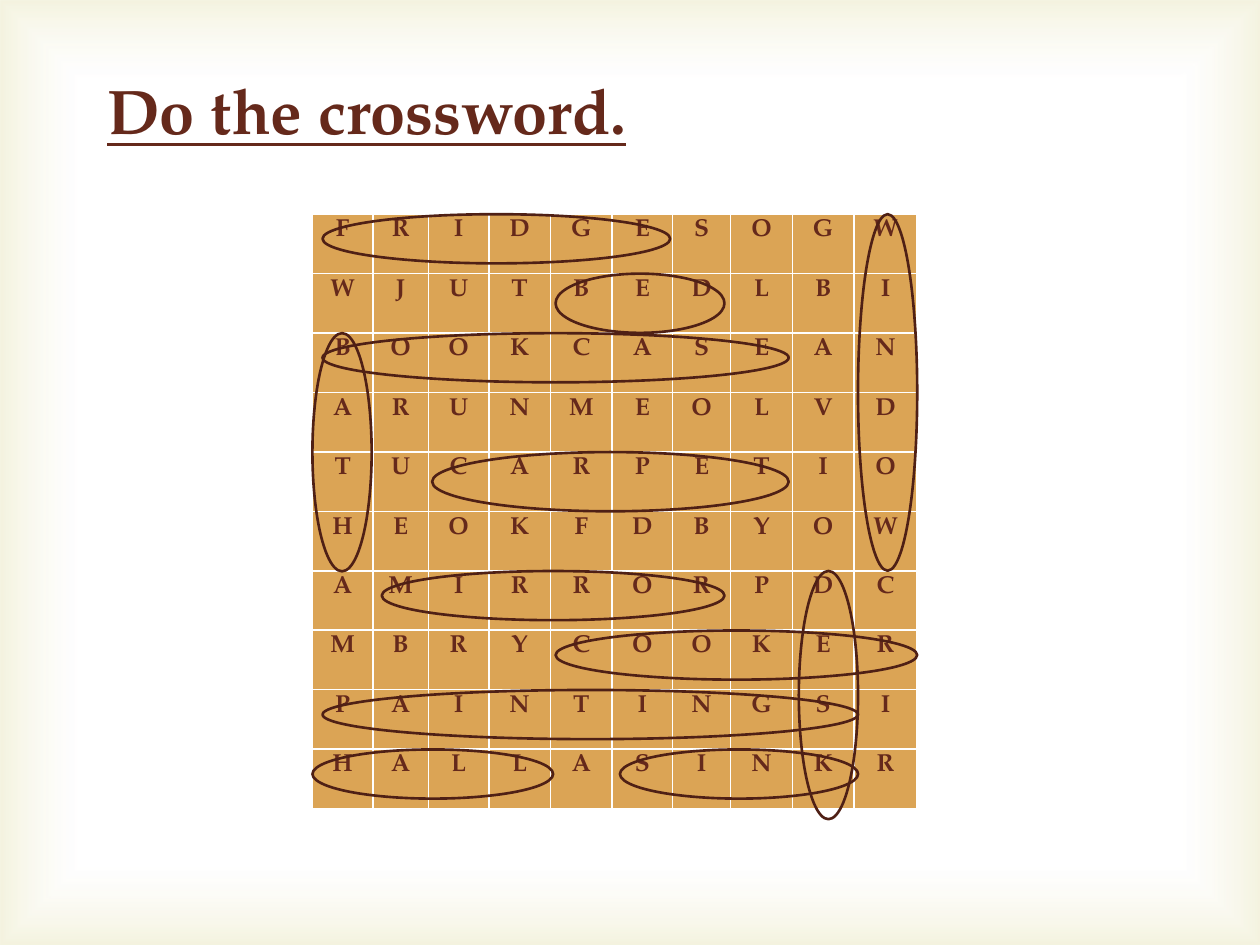
from dataclasses import dataclass

from lxml.etree import SubElement
from pptx import Presentation
from pptx.dml.color import RGBColor
from pptx.enum.shapes import MSO_SHAPE
from pptx.enum.text import MSO_ANCHOR, PP_ALIGN
from pptx.oxml import parse_xml
from pptx.oxml.ns import nsdecls, qn
from pptx.util import Inches, Pt


@dataclass(frozen=True)
class Theme:
    font: str = "TeX Gyre Pagella"
    text: str = "65291B"
    cell: str = "DBA455"
    ring: str = "4F2015"
    paper: str = "FFFFFF"
    glow: str = "D1CA75"
    title_size: int = 36
    letter_size: int = 14
    ring_width: float = 1.5
    border_width: float = 1


THEME = Theme()

LETTERS = [
    "FRIDGESOGW",
    "WJUTBEDLBI",
    "BOOKCASEAN",
    "ARUNMEOLVD",
    "TUCARPETIO",
    "HEOKFDBYOW",
    "AMIRRORPDC",
    "MBRYCOOKER",
    "PAINTINGSI",
    "HALLASINKR",
]
COLUMN_WIDTHS = [0.48, 0.44, 0.48, 0.49, 0.49, 0.48, 0.46, 0.49, 0.49, 0.5]

# word: (first row, offset from grid left, width, height)
WORD_RINGS = {
    "FRIDGE": (0, 0.08, 2.76, 0.39),
    "BOOKCASE": (2, 0.08, 3.7, 0.39),
    "MIRROR": (6, 0.55, 2.72, 0.39),
    "COOKER": (7, 1.93, 2.87, 0.39),
    "PAINTINGS": (8, 0.08, 4.25, 0.39),
    "HALL": (9, 0, 1.91, 0.39),
    "SINK": (9, 2.44, 1.89, 0.39),
    "BATH": (2, 0, 0.47, 1.89),
    "WINDOW": (0, 4.33, 0.47, 2.83),
    "CARPET": (4, 0.95, 2.83, 0.47),
    "BED": (1, 1.93, 1.34, 0.47),
    "DESK": (6, 3.86, 0.47, 1.97),
}


def add_run(paragraph, text, size):
    run = paragraph.add_run()
    run.text = text
    run.font.name = THEME.font
    run.font.size = Pt(size)
    run.font.bold = True
    run.font.color.rgb = RGBColor.from_string(THEME.text)
    return run


def add_backdrop(slide, left, top, width, height):
    shape = slide.shapes.add_shape(MSO_SHAPE.RECTANGLE, left, top, width, height)
    shape.shadow.inherit = False
    shape.line.fill.background()
    gradient = parse_xml(
        f'<a:gradFill {nsdecls("a")} rotWithShape="1"><a:gsLst>'
        f'<a:gs pos="83000"><a:srgbClr val="{THEME.paper}"><a:alpha val="11000"/></a:srgbClr></a:gs>'
        f'<a:gs pos="100000"><a:srgbClr val="{THEME.glow}"><a:alpha val="23000"/></a:srgbClr></a:gs>'
        '</a:gsLst><a:path path="rect">'
        '<a:fillToRect l="50000" t="50000" r="50000" b="50000"/></a:path></a:gradFill>'
    )
    shape.element.spPr.find(qn("a:prstGeom")).addnext(gradient)
    slide.shapes.element.insert(2, shape.element)


def place_title(slide, left, top, width, height):
    title = slide.shapes.title
    title.left, title.top, title.width, title.height = left, top, width, height
    title.text_frame.vertical_anchor = MSO_ANCHOR.TOP
    paragraph = title.text_frame.paragraphs[0]
    paragraph.alignment = PP_ALIGN.LEFT
    run = add_run(paragraph, "Do the crossword.", THEME.title_size)
    run.font.underline = True


def add_borders(cell):
    properties = cell._tc.get_or_add_tcPr()
    for position, side in enumerate(("lnL", "lnR", "lnT", "lnB")):
        line = SubElement(properties, qn(f"a:{side}"), w=str(Pt(THEME.border_width)))
        fill = SubElement(line, qn("a:solidFill"))
        SubElement(fill, qn("a:srgbClr"), val=THEME.paper)
        properties.insert(position, line)


def add_letter_grid(slide, left, top, width, height):
    rows, columns = len(LETTERS), len(COLUMN_WIDTHS)
    table = slide.shapes.add_table(rows, columns, left, top, width, height).table
    table.first_row = False
    table.horz_banding = False
    for column, column_width in zip(table.columns, COLUMN_WIDTHS):
        column.width = Inches(column_width)
    for row, letters in zip(table.rows, LETTERS):
        row.height = height // rows
        for cell, letter in zip(row.cells, letters):
            cell.margin_left = cell.margin_right = Inches(0.04)
            cell.margin_top = cell.margin_bottom = Inches(0.04)
            cell.fill.solid()
            cell.fill.fore_color.rgb = RGBColor.from_string(THEME.cell)
            add_borders(cell)
            paragraph = cell.text_frame.paragraphs[0]
            paragraph.alignment = PP_ALIGN.CENTER
            add_run(paragraph, letter, THEME.letter_size)


def add_word_rings(slide, left, top, height):
    row_height = height // len(LETTERS)
    for row, offset, ring_width, ring_height in WORD_RINGS.values():
        ring = slide.shapes.add_shape(
            MSO_SHAPE.OVAL,
            left + Inches(offset),
            top + row * row_height,
            Inches(ring_width),
            Inches(ring_height),
        )
        ring.shadow.inherit = False
        ring.fill.background()
        ring.line.color.rgb = RGBColor.from_string(THEME.ring)
        ring.line.width = Pt(THEME.ring_width)


def main():
    presentation = Presentation()
    presentation.slide_width = Inches(10)
    presentation.slide_height = Inches(7.5)
    slide = presentation.slides.add_slide(presentation.slide_layouts[5])
    add_backdrop(slide, 0, 0, presentation.slide_width, presentation.slide_height)
    place_title(slide, Inches(0.75), Inches(0.52), Inches(5), Inches(0.71))
    left, top, width, height = Inches(2.48), Inches(1.7), Inches(4.8), Inches(4.72)
    add_letter_grid(slide, left, top, width, height)
    add_word_rings(slide, left, top, height)
    presentation.save("out.pptx")


if __name__ == "__main__":
    main()
